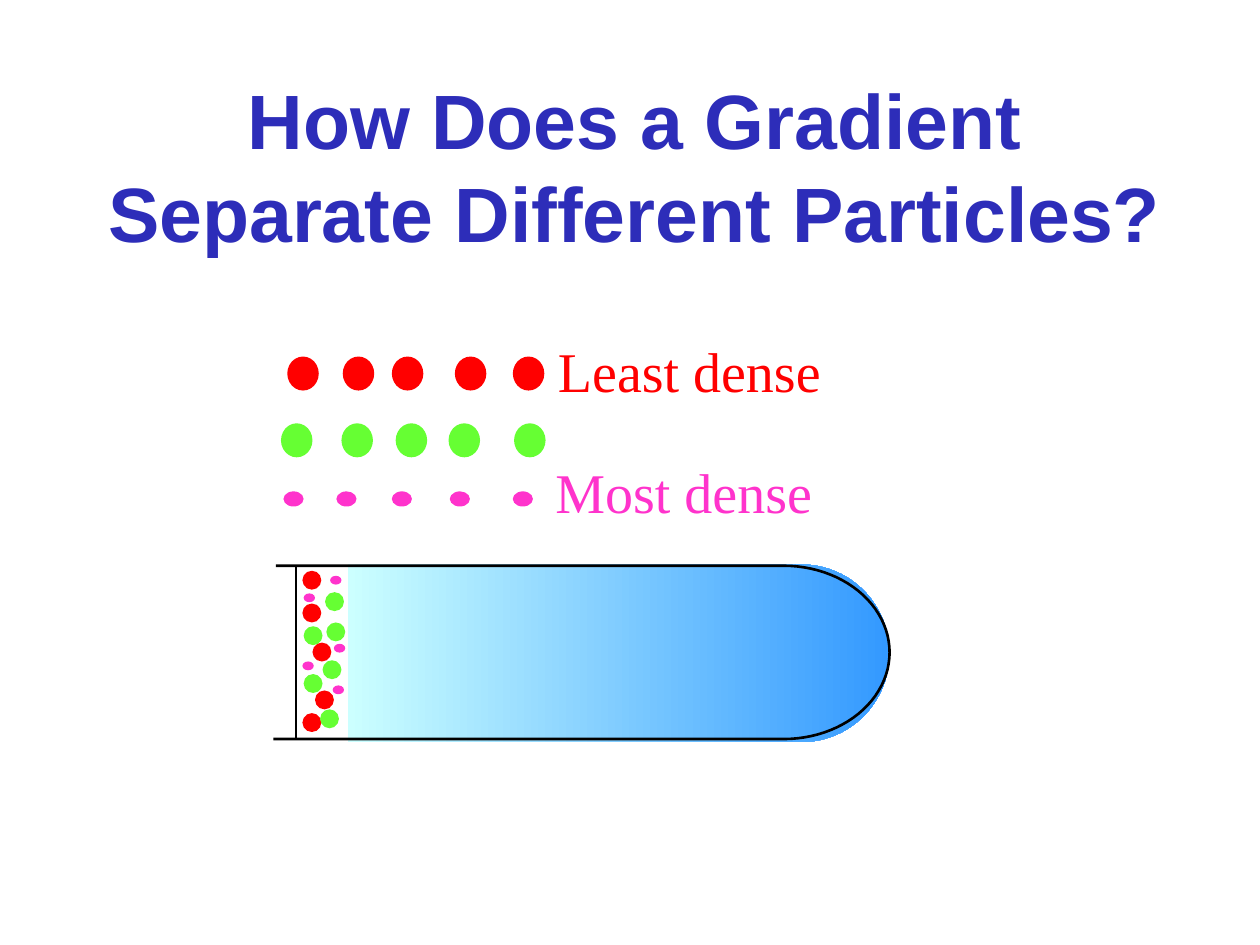
import math
from dataclasses import dataclass

from lxml import etree
from pptx import Presentation
from pptx.dml.color import RGBColor
from pptx.enum.shapes import MSO_CONNECTOR, MSO_SHAPE
from pptx.enum.text import MSO_ANCHOR, MSO_AUTO_SIZE, PP_ALIGN
from pptx.oxml.ns import qn
from pptx.util import Inches, Pt

OVAL = MSO_SHAPE.OVAL
STRAIGHT = MSO_CONNECTOR.STRAIGHT
MIDDLE = MSO_ANCHOR.MIDDLE
CENTER, LEFT = PP_ALIGN.CENTER, PP_ALIGN.LEFT
NO_FIT, GROW = MSO_AUTO_SIZE.NONE, MSO_AUTO_SIZE.SHAPE_TO_FIT_TEXT
TITLE_ONLY = 5


@dataclass(frozen=True)
class Theme:
    title: str = "2D2DB9"
    least: str = "FF0000"
    medium: str = "66FF33"
    most: str = "FF33CC"
    gradient: tuple = ("CCFFFF", "3399FF")
    outline: str = "000000"
    title_font: str = "Arial"
    label_font: str = "Times New Roman"
    title_size: int = 44
    label_size: int = 32


THEME = Theme()

# Particles in the tube: colour, width, height, top-left corners
TUBE_PARTICLES = [
    (THEME.least, 0.15, 0.15,
     [(2.4, 4.53), (2.4, 4.79), (2.5, 5.48), (2.48, 5.1), (2.4, 5.66)]),
    (THEME.medium, 0.15, 0.15,
     [(2.41, 5.35), (2.56, 5.24), (2.59, 4.94), (2.58, 4.7), (2.54, 5.63), (2.41, 4.97)]),
    (THEME.most, 0.09, 0.07,
     [(2.4, 5.25), (2.62, 4.57), (2.64, 5.44), (2.65, 5.11), (2.41, 4.71)]),
]

# Legend rows: colour, width, height, top, lefts, label, label box
LEGEND_ROWS = [
    (THEME.least, 0.25, 0.27, 2.83, [2.28, 2.72, 3.11, 3.61, 4.07],
     "Least dense", (4.33, 2.62, 2.29, 0.63)),
    (THEME.medium, 0.25, 0.27, 3.36, [2.23, 2.71, 3.14, 3.56, 4.08], None, None),
    (THEME.most, 0.16, 0.12, 3.9, [2.25, 2.67, 3.11, 3.57, 4.07],
     "Most dense", (4.31, 3.58, 2.24, 0.63)),
]


def rgb(color):
    return RGBColor.from_string(color)


def write_text(shape, text, *, font, size, color, bold=False, align=LEFT,
               wrap=True, fit=NO_FIT, anchor=None):
    frame = shape.text_frame
    frame.word_wrap = wrap
    frame.auto_size = fit
    if anchor is not None:
        frame.vertical_anchor = anchor
    paragraph = frame.paragraphs[0]
    paragraph.alignment = align
    run = paragraph.add_run()
    run.text = text
    run.font.name = font
    run.font.size = Pt(size)
    run.font.bold = bold
    run.font.color.rgb = rgb(color)


def add_title(slide, text):
    title = slide.shapes.title
    title.left, title.top = Inches(0.58), Inches(0.58)
    title.width, title.height = Inches(8.92), Inches(1.46)
    write_text(title, text, font=THEME.title_font, size=THEME.title_size,
               color=THEME.title, bold=True, align=CENTER, anchor=MIDDLE)


def add_particle(shapes, color, left, top, width, height):
    particle = shapes.add_shape(OVAL, Inches(left), Inches(top), Inches(width), Inches(height))
    particle.shadow.inherit = False
    particle.fill.solid()
    particle.fill.fore_color.rgb = rgb(color)
    particle.line.fill.background()


def add_tube_shape(shapes, bottom_left, top_left, bend, right, top, bottom, closed):
    """Draw straight walls joined by half an ellipse on the right."""
    middle, radius = (top + bottom) / 2, (bottom - top) / 2
    steps = 48
    angles = [math.pi * (0.5 - step / steps) for step in range(steps + 1)]
    points = [(bend + (right - bend) * math.cos(angle), middle + radius * math.sin(angle))
              for angle in angles]
    points.append((top_left, top))
    builder = shapes.build_freeform(Inches(bottom_left), Inches(bottom))
    builder.add_line_segments([(Inches(x), Inches(y)) for x, y in points], close=closed)
    shape = builder.convert_to_shape()
    shape.shadow.inherit = False
    return shape


def add_wall(shapes, x, top, bottom):
    wall = shapes.add_connector(STRAIGHT, Inches(x), Inches(top), Inches(x), Inches(bottom))
    wall.line.color.rgb = rgb(THEME.outline)
    wall.line.width = Pt(1)
    etree.SubElement(wall._element.spPr, qn("a:effectLst"))


def add_tube(slide):
    shapes = slide.shapes.add_group_shape().shapes

    # Density gradient
    liquid = add_tube_shape(shapes, 2.76, 2.76, 6.36, 7.06, 4.48, 5.89, closed=True)
    liquid.fill.gradient()
    liquid.fill.gradient_angle = 0
    for position, (stop, color) in enumerate(zip(liquid.fill.gradient_stops, THEME.gradient)):
        stop.position = position
        stop.color.rgb = rgb(color)
    liquid.line.fill.background()

    # Sample surface and glass
    add_wall(shapes, 2.35, 4.5, 5.86)
    glass = add_tube_shape(shapes, 2.17, 2.19, 6.22, 7.06, 4.49, 5.865, closed=False)
    glass.fill.background()
    glass.line.color.rgb = rgb(THEME.outline)
    glass.line.width = Pt(1.5)

    # Mixed sample
    for color, width, height, corners in TUBE_PARTICLES:
        for left, top in corners:
            add_particle(shapes, color, left, top, width, height)


def add_legend_row(slide, color, width, height, top, lefts, label, box):
    shapes = slide.shapes.add_group_shape().shapes
    for left in lefts:
        add_particle(shapes, color, left, top, width, height)
    if label:
        textbox = shapes.add_textbox(*[Inches(length) for length in box])
        write_text(textbox, label, font=THEME.label_font, size=THEME.label_size,
                   color=color, wrap=False, fit=GROW)


def main():
    presentation = Presentation()
    presentation.slide_width, presentation.slide_height = Inches(10), Inches(7.5)
    slide = presentation.slides.add_slide(presentation.slide_layouts[TITLE_ONLY])

    add_title(slide, "How Does a Gradient Separate Different Particles?")
    add_tube(slide)
    for row in LEGEND_ROWS:
        add_legend_row(slide, *row)

    presentation.save("out.pptx")


if __name__ == "__main__":
    main()
